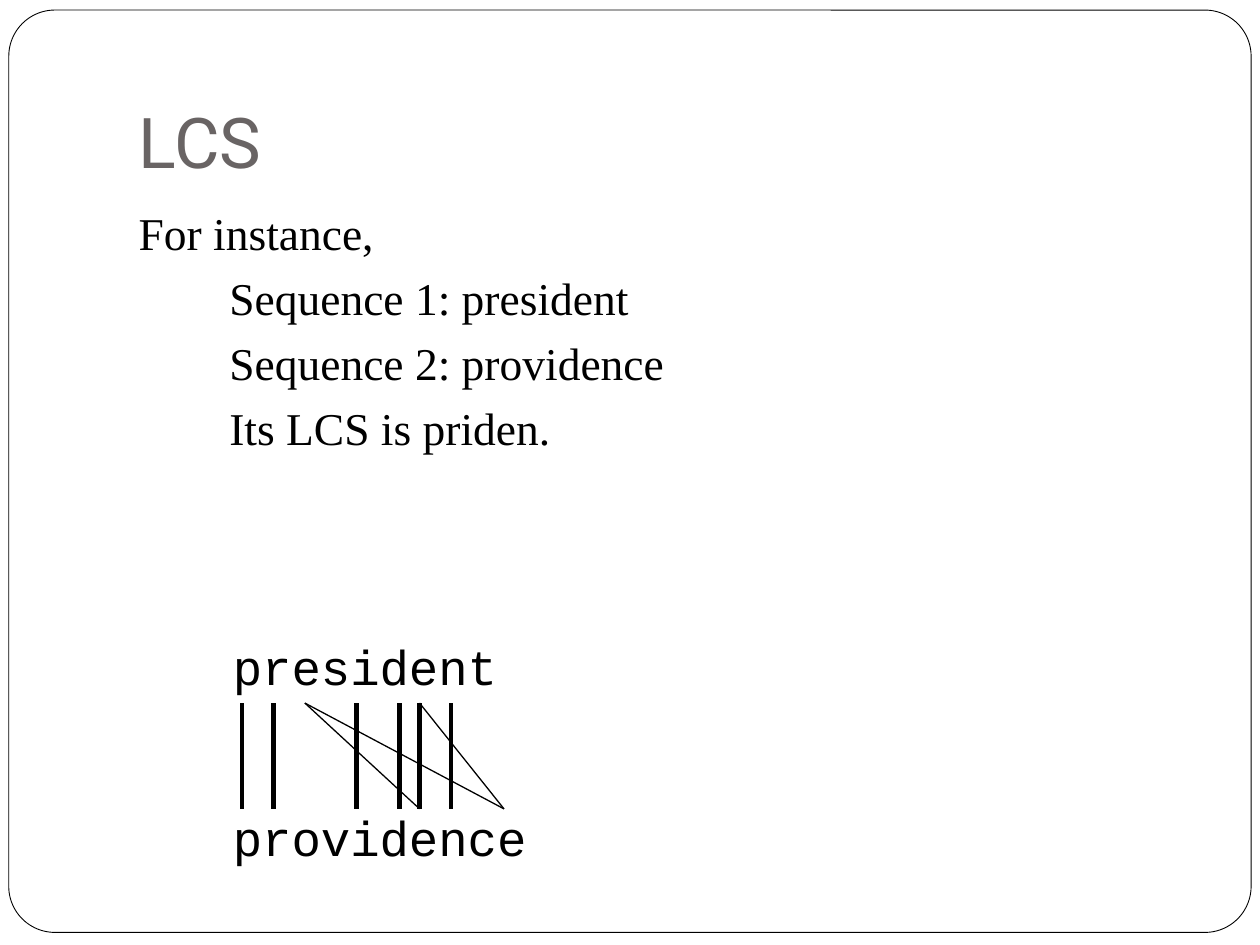
from lxml import etree
from pptx import Presentation
from pptx.dml.color import RGBColor
from pptx.enum.shapes import MSO_CONNECTOR, MSO_SHAPE
from pptx.enum.text import MSO_ANCHOR, MSO_AUTO_SIZE, PP_ALIGN
from pptx.oxml.ns import qn
from pptx.util import Inches, Pt

LEFT = PP_ALIGN.LEFT
TOP, BOTTOM = MSO_ANCHOR.TOP, MSO_ANCHOR.BOTTOM
NO_FIT, GROW = MSO_AUTO_SIZE.NONE, MSO_AUTO_SIZE.SHAPE_TO_FIT_TEXT
STRAIGHT = MSO_CONNECTOR.STRAIGHT
ROUNDED = MSO_SHAPE.ROUNDED_RECTANGLE
COLORS = {"ink": "000000", "title": "696464", "paper": "FFFFFF"}


def color(name):
    return RGBColor.from_string(COLORS[name])


def add_line_of_text(para, text, font, size, ink, **layout):
    """Write one left-aligned paragraph; layout holds paragraph attributes."""
    para.alignment = LEFT
    for name, value in layout.items():
        setattr(para, name, value)
    span = para.add_run()
    span.text = text
    for name, value in {"name": font, "size": Pt(size), "bold": False}.items():
        setattr(span.font, name, value)
    span.font.color.rgb = color(ink)


deck = Presentation()
deck.slide_width, deck.slide_height = Inches(10), Inches(7.5)
page = deck.slides.add_slide(deck.slide_layouts[1])
title, body = page.placeholders

# Rounded frame behind everything
frame = page.shapes.add_shape(
    ROUNDED, Inches(0.07), Inches(0.08), Inches(9.86), Inches(7.32))
frame.adjustments[0] = 0.05
frame.shadow.inherit = False
frame.fill.solid()
frame.fill.fore_color.rgb = color("paper")
frame.line.color.rgb = color("ink")
frame.line.width = Pt(0.5)
title.element.addprevious(frame.element)

# Text areas
words = page.shapes.add_textbox(0, 0, 0, 0)
areas = [
    (title, (1, 0.3, 8.5, 1.25), {
        "vertical_anchor": BOTTOM, "auto_size": NO_FIT,
        "margin_bottom": Inches(0.1)}),
    (body, (1, 1.58, 8.5, 5), {"vertical_anchor": TOP, "auto_size": NO_FIT}),
    (words, (1.75, 5, 3.92, 1.97), {"vertical_anchor": TOP, "auto_size": GROW}),
]
for box, place, settings in areas:
    box.left, box.top, box.width, box.height = map(Inches, place)
    box.text_frame.word_wrap = True
    for name, value in settings.items():
        setattr(box.text_frame, name, value)

add_line_of_text(title.text_frame.paragraphs[0], "LCS", "Roboto", 40, "title")

statements = [
    ("For instance,", 0),
    ("Sequence 1: president", 0.72),
    ("Sequence 2: providence", 0.72),
    ("Its LCS is priden.", 0.72),
]
for number, (text, margin) in enumerate(statements):
    frame_text = body.text_frame
    para = frame_text.add_paragraph() if number else frame_text.paragraphs[0]
    add_line_of_text(para, text, "Times New Roman", 26, "ink",
                     space_before=Pt(5.8))
    properties = para._p.get_or_add_pPr()
    properties.set("marL", str(Inches(margin)))
    properties.set("indent", "0")
    etree.SubElement(properties, qn("a:buNone"))

# The two aligned words, with room for the matching lines between them
for number, (word, gap) in enumerate([("president", 5), ("providence", 64)]):
    frame_text = words.text_frame
    para = frame_text.add_paragraph() if number else frame_text.paragraphs[0]
    add_line_of_text(para, word, "Courier New", 28, "ink", space_before=Pt(gap))

# Thick lines join letters of the LCS, thin ones the other matches of "e"
matches = [(x, x, 2.5) for x in (1.92, 2.17, 2.83, 3.17, 3.33, 3.58)]
matches += [(2.42, 3.33, 0.75), (2.42, 4, 0.75), (3.33, 4, 0.75)]
for upper, lower, weight in matches:
    match = page.shapes.add_connector(
        STRAIGHT, Inches(upper), Inches(5.58), Inches(lower), Inches(6.42))
    match.line.color.rgb = color("ink")
    match.line.width = Pt(weight)
    etree.SubElement(match.element.spPr, qn("a:effectLst"))

deck.save("out.pptx")
